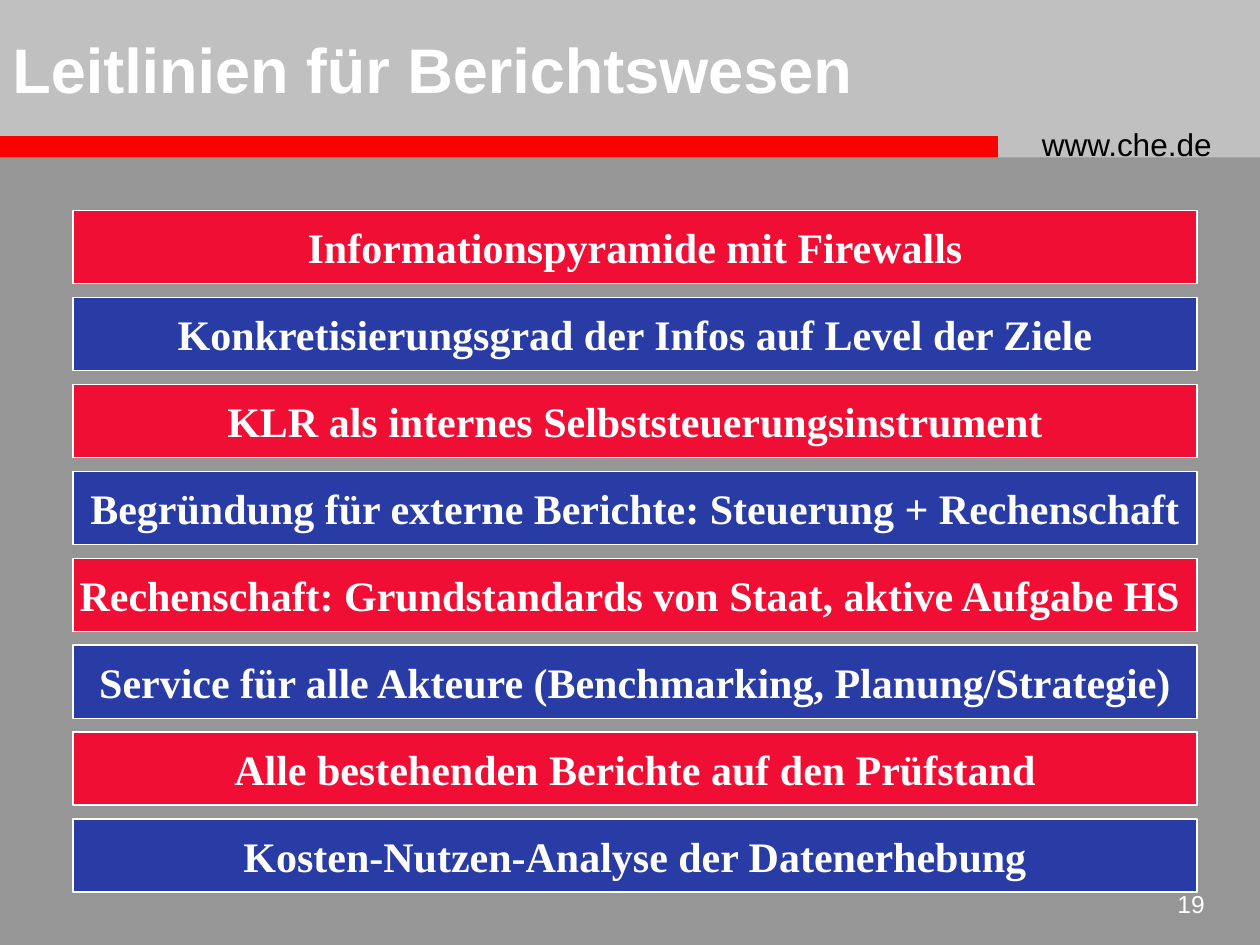
from pptx import Presentation
from pptx.dml.color import RGBColor
from pptx.enum.shapes import MSO_SHAPE
from pptx.enum.text import MSO_ANCHOR, PP_ALIGN
from pptx.util import Inches, Pt

RECT = MSO_SHAPE.RECTANGLE
TOP, MIDDLE = MSO_ANCHOR.TOP, MSO_ANCHOR.MIDDLE
LEFT, CENTER, RIGHT = PP_ALIGN.LEFT, PP_ALIGN.CENTER, PP_ALIGN.RIGHT

COLORS = {
    "back": "969696",
    "band": "C0C0C0",
    "rule": "FF0000",
    "red": "F00E34",
    "blue": "293BA5",
    "white": "FFFFFF",
    "black": "000000",
}
GUIDES = [
    "Informationspyramide mit Firewalls",
    "Konkretisierungsgrad der Infos auf Level der Ziele",
    "KLR als internes Selbststeuerungsinstrument",
    "Begründung für externe Berichte: Steuerung + Rechenschaft",
    "Rechenschaft: Grundstandards von Staat, aktive Aufgabe HS ",
    "Service für alle Akteure (Benchmarking, Planung/Strategie)",
    "Alle bestehenden Berichte auf den Prüfstand",
    "Kosten-Nutzen-Analyse der Datenerhebung",
]


def color(name):
    return RGBColor.from_string(COLORS[name])


def write(shape, text, size=18, font="Arial", ink="white", bold=False,
          align=LEFT, anchor=TOP, wrap=True):
    frame = shape.text_frame
    frame.word_wrap = wrap
    frame.vertical_anchor = anchor
    para = frame.paragraphs[0]
    para.alignment = align
    run = para.add_run()
    run.text = text
    run.font.size = Pt(size)
    run.font.name = font
    run.font.bold = bold
    run.font.color.rgb = color(ink)


def add_box(slide, x, y, w, h, fill, line=None):
    box = slide.shapes.add_shape(RECT, x, y, w, h)
    box.shadow.inherit = False
    box.fill.solid()
    box.fill.fore_color.rgb = color(fill)
    if line:
        box.line.color.rgb = color(line)
        box.line.width = Pt(0.75)
    else:
        box.line.fill.background()
    return box


def add_header(slide, x, y, w, h):
    # Grey band with the red rule along its foot
    rule = Inches(0.17)
    add_box(slide, x, y, w, h, "band")
    add_box(slide, x, y + h - rule, Inches(7.92), rule, "rule")

    # Title and web address
    title = slide.shapes.add_textbox(x, y, Inches(8.08), h - rule)
    write(title, "Leitlinien für Berichtswesen", size=36, bold=True,
          anchor=MIDDLE)
    site = slide.shapes.add_textbox(x + Inches(8.17), y + Inches(0.94),
                                    Inches(1.75), Inches(0.4))
    write(site, "www.che.de", ink="black")


def add_guides(slide, x, y, w, h):
    # Bars of equal height in alternating colours
    bar = Inches(0.58)
    step = (h - bar) // (len(GUIDES) - 1)
    for i, text in enumerate(GUIDES):
        fill = "blue" if i % 2 else "red"
        box = add_box(slide, x, y + i * step, w, bar, fill, line="white")
        write(box, text, size=24, font="Times New Roman", bold=True,
              align=CENTER, anchor=MIDDLE, wrap=False)


def add_number(slide, x, y, w, h):
    number = slide.shapes.add_textbox(x, y, w, h)
    write(number, "19", size=14, align=RIGHT)


def main():
    deck = Presentation()
    deck.slide_width, deck.slide_height = Inches(10), Inches(7.5)
    slide = deck.slides.add_slide(deck.slide_layouts[6])
    slide.background.fill.solid()
    slide.background.fill.fore_color.rgb = color("back")

    add_header(slide, 0, 0, deck.slide_width, Inches(1.25))
    add_number(slide, Inches(9.08), Inches(7.01), Inches(0.58), Inches(0.42))
    add_guides(slide, Inches(0.58), Inches(1.67), Inches(8.92), Inches(5.41))
    deck.save("out.pptx")


if __name__ == "__main__":
    main()
